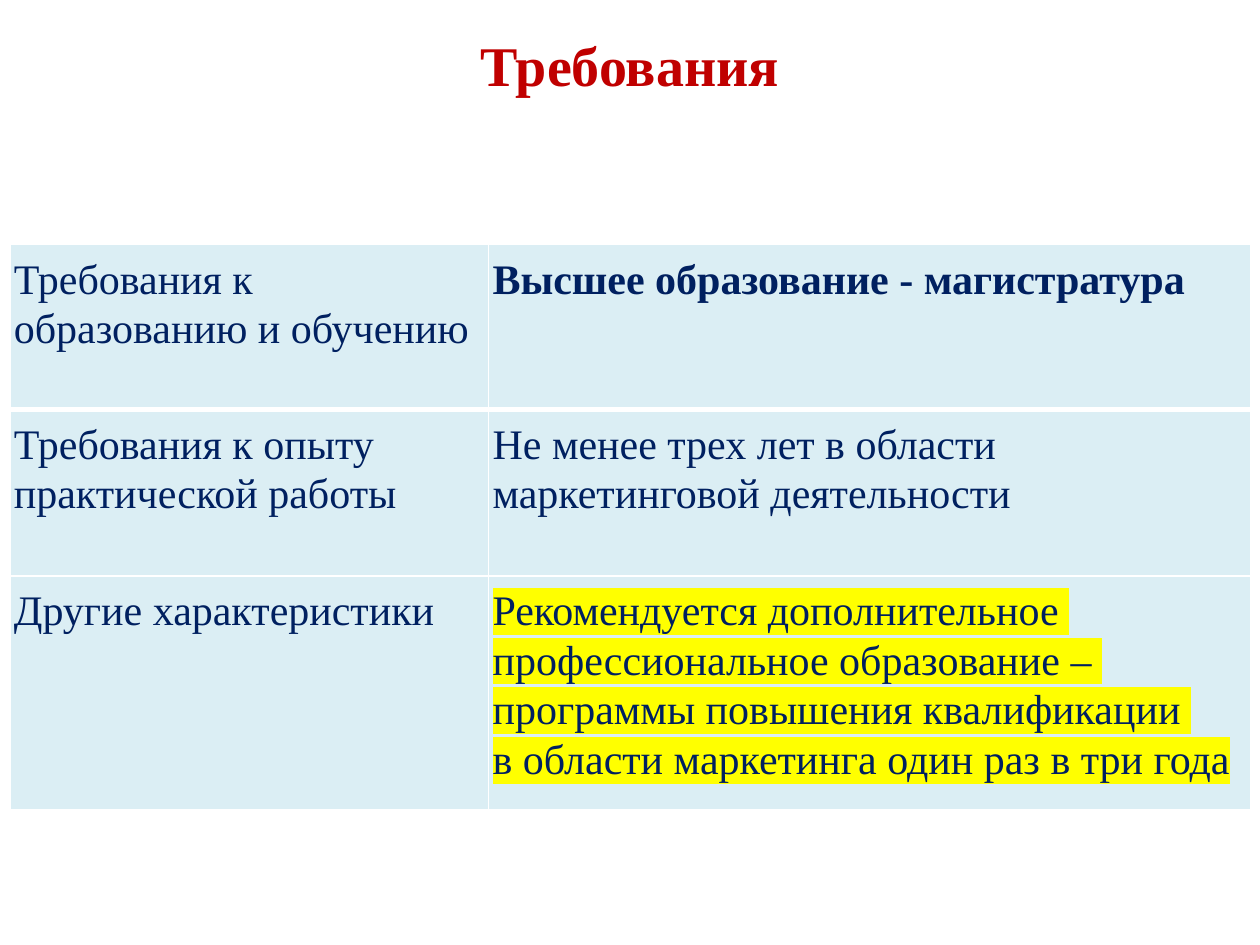
from lxml import etree
from pptx import Presentation
from pptx.dml.color import RGBColor
from pptx.enum.text import MSO_ANCHOR, PP_ALIGN
from pptx.oxml.ns import qn
from pptx.util import Cm, Pt

CENTER = PP_ALIGN.CENTER
MIDDLE = MSO_ANCHOR.MIDDLE
FONT = "Times New Roman"
NAVY, RED, PALE, WHITE, YELLOW = "002060", "C00000", "DBEEF4", "FFFFFF", "FFFF00"


def rgb(value):
    return RGBColor.from_string(value)


def add_run(p, text, size, color, bold=False):
    r = p.add_run()
    r.text = text
    r.font.size = Pt(size)
    r.font.name = FONT
    r.font.bold = bold
    r.font.color.rgb = rgb(color)
    return r


prs = Presentation()
prs.slide_width = Cm(25.4)
prs.slide_height = Cm(19.05)
s = prs.slides.add_slide(prs.slide_layouts[6])

title = s.shapes.add_textbox(Cm(0), Cm(0.05), Cm(25.4), Cm(2.5))
tf = title.text_frame
tf.word_wrap = True
tf.vertical_anchor = MIDDLE
p = tf.paragraphs[0]
p.alignment = CENTER
add_run(p, "Требования", 32, RED, True)

rows = [
    (["Требования к", "образованию и обучению"],
     ["Высшее образование - магистратура"]),
    (["Требования к опыту", "практической работы"],
     ["Не менее трех лет в области", "маркетинговой деятельности"]),
    (["Другие характеристики"],
     ["Рекомендуется дополнительное ", "профессиональное образование – ",
      "программы повышения квалификации ", "в области маркетинга один раз в три года"]),
]
col_widths = [9.65, 15.37]
row_heights = [3.33, 3.35, 4.36]

table = s.shapes.add_table(len(rows), len(col_widths), Cm(0.2), Cm(4.93),
                           Cm(sum(col_widths)), Cm(sum(row_heights))).table
for col, width in zip(table.columns, col_widths):
    col.width = Cm(width)
for row, height in zip(table.rows, row_heights):
    row.height = Cm(height)

for i, row in enumerate(rows):
    for j, lines in enumerate(row):
        cell = table.cell(i, j)
        cell.margin_left = cell.margin_right = Cm(0.08)
        cell.margin_top = cell.margin_bottom = Cm(0.18)
        cell.fill.solid()
        cell.fill.fore_color.rgb = rgb(PALE)

        tcPr = cell.fill._xPr
        for k, side in enumerate(("lnL", "lnR", "lnT", "lnB")):
            thick = (i, side) in ((0, "lnB"), (1, "lnT"))
            ln = etree.Element(qn("a:" + side), w=str(Pt(3 if thick else 1)))
            fill = etree.SubElement(ln, qn("a:solidFill"))
            etree.SubElement(fill, qn("a:srgbClr"), val=WHITE)
            tcPr.insert(k, ln)

        tf = cell.text_frame
        for k, line in enumerate(lines):
            p = tf.add_paragraph() if k else tf.paragraphs[0]
            p.line_spacing = 1.07
            r = add_run(p, line, 24, NAVY, (i, j) == (0, 1))
            if (i, j) == (2, 1):
                highlight = etree.Element(qn("a:highlight"))
                etree.SubElement(highlight, qn("a:srgbClr"), val=YELLOW)
                r.font._rPr.find(qn("a:solidFill")).addnext(highlight)

prs.save("out.pptx")
